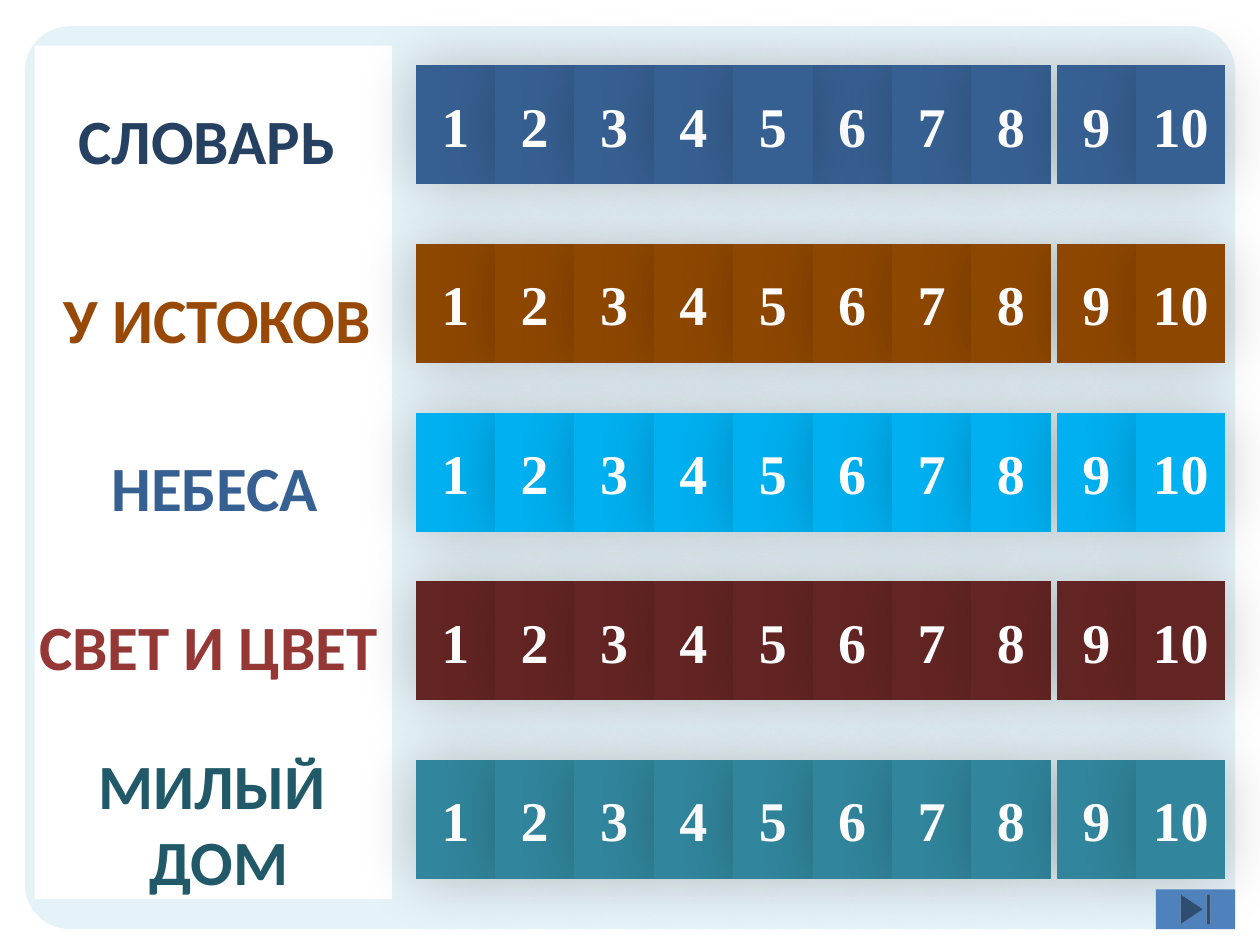
from lxml import etree
from pptx import Presentation
from pptx import util as u
from pptx.dml.color import RGBColor
from pptx.enum import shapes, text
from pptx.oxml import ns

# label, left, top, width, height, label colour
LABELS = [
    (["СЛОВАРЬ"], 1.3, 1.93, 5.74, 1.8, "254061"),
    (["У ИСТОКОВ"], 0.99, 5.53, 6.78, 1.8, "984807"),
    (["НЕБЕСА"], 1.98, 8.92, 4.7, 1.8, "376092"),
    (["СВЕТ И ЦВЕТ"], 0.5, 12.12, 7.4, 1.8, "953735"),
    (["МИЛЫЙ ", "ДОМ"], 1.7, 14.93, 5.44, 3.32, "215968"),
]
ROWS = [(1.32, "376092"), (4.92, "8E4700"), (8.32, "00B0F0"),
        (11.72, "632523"), (15.32, "31859C")]
BUTTON_LEFT, BUTTON_WIDTH, BUTTON_HEIGHT = 8.38, 1.6, 2.4
NINE_LEFT, TEN_WIDTH = 21.3, 1.8


def color(value):
    return RGBColor.from_string(value)


def write(frame, lines, *, font, size, fill, bold=True):
    for index, line in enumerate(lines):
        paragraph = frame.add_paragraph() if index else frame.paragraphs[0]
        paragraph.alignment = text.PP_ALIGN.CENTER
        run = paragraph.add_run()
        run.text = line
        run.font.name = font
        run.font.size = u.Pt(size)
        run.font.bold = bold
        run.font.color.rgb = color(fill)


class Board:
    label_style = {"font": "Calibri", "size": 36}
    number_style = {"font": "Times New Roman", "size": 32, "fill": "FFFFFF"}

    def __init__(self, slide):
        self.slide = slide

    def block(self, kind, left, top, width, height, fill):
        shape = self.slide.shapes.add_shape(
            kind, u.Cm(left), u.Cm(top), u.Cm(width), u.Cm(height))
        shape.shadow.inherit = False
        shape.fill.solid()
        shape.fill.fore_color.rgb = color(fill)
        shape.line.fill.background()
        return shape

    def panel(self, left, top, width, height, fill, opacity):
        shape = self.block(shapes.MSO_SHAPE.ROUNDED_RECTANGLE, left, top, width, height, fill)
        shape.adjustments[0] = 0.05
        value = shape.fill._xPr.find(".//" + ns.qn("a:srgbClr"))
        etree.SubElement(value, ns.qn("a:alpha"), val=str(opacity * 1000))

    def label(self, lines, left, top, width, height, fill):
        box = self.slide.shapes.add_textbox(
            u.Cm(left), u.Cm(top), u.Cm(width), u.Cm(height))
        box.text_frame.word_wrap = False
        box.text_frame.auto_size = text.MSO_AUTO_SIZE.SHAPE_TO_FIT_TEXT
        write(box.text_frame, lines, fill=fill, **self.label_style)

    def button(self, number, left, top, fill, width=BUTTON_WIDTH):
        shape = self.block(shapes.MSO_SHAPE.ACTION_BUTTON_CUSTOM,
                           left, top, width, BUTTON_HEIGHT, fill)
        shape.text_frame.vertical_anchor = text.MSO_ANCHOR.MIDDLE
        write(shape.text_frame, [str(number)], **self.number_style)
        self.soft_shadow(shape)

    def soft_shadow(self, shape):
        effects = shape._element.spPr.find(ns.qn("a:effectLst"))
        shadow = etree.SubElement(
            effects, ns.qn("a:outerShdw"), blurRad=str(u.Pt(34)), dist="0",
            dir=str(93 * 60000), algn="ctr", rotWithShape="0")
        value = etree.SubElement(shadow, ns.qn("a:srgbClr"), val="000000")
        etree.SubElement(value, ns.qn("a:alpha"), val="21000")


def main():
    presentation = Presentation()
    presentation.slide_width, presentation.slide_height = u.Cm(25.4), u.Cm(19.05)
    board = Board(presentation.slides.add_slide(presentation.slide_layouts[6]))

    # Background panel and topic column
    board.panel(0.5, 0.53, 24.4, 18.2, "DBEEF4", 72)
    board.block(shapes.MSO_SHAPE.RECTANGLE, 0.7, 0.92, 7.2, 17.2, "FFFFFF")
    for label in LABELS:
        board.label(*label)

    # Buttons 1 to 8; in the first row, 5 lies over 6 and 7
    for row, (top, fill) in enumerate(ROWS):
        order = range(1, 9) if row else (1, 2, 3, 4, 6, 7, 5, 8)
        for number in order:
            board.button(number, BUTTON_LEFT + (number - 1) * BUTTON_WIDTH, top, fill)

    # Buttons 9 and 10, set slightly apart
    for top, fill in ROWS:
        board.button(9, NINE_LEFT, top, fill)
    for top, fill in ROWS:
        board.button(10, NINE_LEFT + BUTTON_WIDTH, top, fill, TEN_WIDTH)

    # Jump to the end
    board.block(shapes.MSO_SHAPE.ACTION_BUTTON_END, 23.3, 17.93, 1.6, 0.8, "4F81BD")

    presentation.save("out.pptx")


if __name__ == "__main__":
    main()
